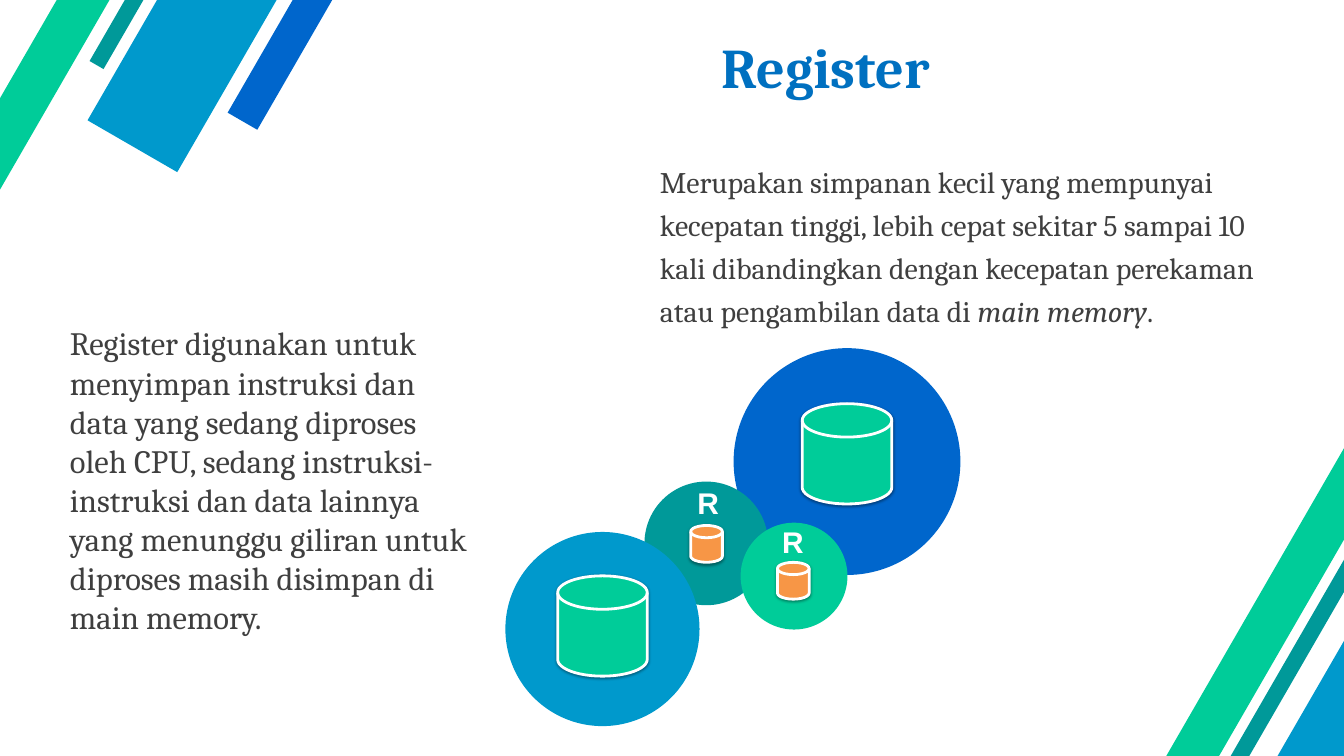
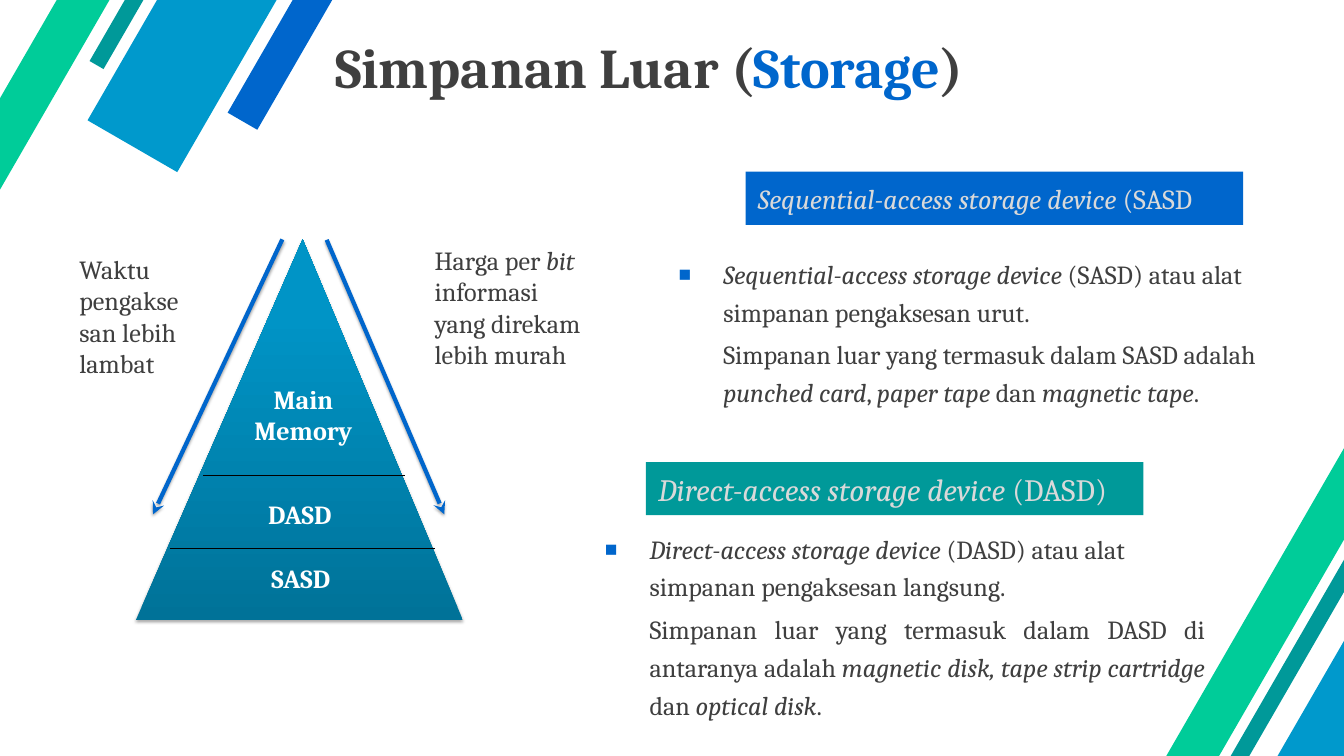
from copy import deepcopy
from lxml.etree import SubElement
from pptx import Presentation
from pptx.dml.color import RGBColor
from pptx.enum.shapes import MSO_CONNECTOR, MSO_SHAPE
from pptx.enum.text import MSO_ANCHOR, PP_ALIGN
from pptx.oxml.ns import qn
from pptx.util import Pt

BLUE = RGBColor(0x00, 0x66, 0xCC)
SKY = RGBColor(0x00, 0x99, 0xCC)
TEAL = RGBColor(0x00, 0x99, 0x99)
GREEN = RGBColor(0x00, 0xCC, 0x99)
TITLE = RGBColor(0x00, 0x70, 0xC0)
ORANGE = RGBColor(0xF7, 0x96, 0x46)
DARK = RGBColor(0x3F, 0x3F, 0x3F)
PALE = RGBColor(0xD9, 0xD9, 0xD9)
WHITE = RGBColor(0xFF, 0xFF, 0xFF)
BLACK = RGBColor(0x00, 0x00, 0x00)
SHADES = [(0, RGBColor(0x00, 0x72, 0x98)), (0.8, RGBColor(0x00, 0x94, 0xC6)),
          (1, RGBColor(0x00, 0x95, 0xC7))]
TOP = (346, 32, 1077, 78)
WIDE = (13, 6.5)
SLIM = (7.2, 3.6)


def form(slide, kind, box, color):
    shape = slide.shapes.add_shape(kind, *map(Pt, box))
    shape.shadow.inherit = False
    shape.fill.solid()
    shape.fill.fore_color.rgb = color
    shape.line.fill.background()
    return shape


def text(slide, box, size, color, paras, inset=SLIM, bold=False, align=None,
         anchor=MSO_ANCHOR.TOP, space=None, fill=None, font="Cambria"):
    shape = slide.shapes.add_textbox(*map(Pt, box))
    if fill is not None:
        shape.fill.solid()
        shape.fill.fore_color.rgb = fill
    frame = shape.text_frame
    frame.word_wrap = True
    frame.vertical_anchor = anchor
    frame.margin_left = frame.margin_right = Pt(inset[0])
    frame.margin_top = frame.margin_bottom = Pt(inset[1])
    for row, words in enumerate(paras):
        para = frame.add_paragraph() if row else frame.paragraphs[0]
        para.alignment = align
        para.line_spacing = space
        if row:
            para.space_before = Pt(size * 0.2)
        for turn, part in enumerate(words.split("*")):
            if part:
                run = para.add_run()
                run.text = part
                run.font.name = font
                run.font.size = Pt(size)
                run.font.bold = bold
                run.font.italic = turn % 2 == 1
                run.font.color.rgb = color
    return frame


deck = Presentation()
deck.slide_width, deck.slide_height = Pt(1440), Pt(810)
blank = deck.slide_layouts[6]
for holder in list(blank.placeholders):
    holder.element.getparent().remove(holder.element)
first = deck.slides.add_slide(blank)
second = deck.slides.add_slide(blank)
shady = []

bands = []
for left, top, width, height, color in [
    (-102.2, -515.5, 1448, 36.7, BLUE),
    (-219.6, -525, 1446, 111, SKY),
    (-258.5, -566, 1448, 17.3, TEAL),
    (-419.8, -394, 1444.3, 49, GREEN),
    (985, 278, 1446, 111, SKY),
    (928.8, 239.8, 1448, 17.3, TEAL),
    (771, 412.6, 1444.3, 49, GREEN),
]:
    band = form(first, MSO_SHAPE.RECTANGLE, (left, top, width, height), color)
    band.rotation = 300
    bands.append(band)
for band in bands:
    blank.shapes.element.append(band.element)

text(first, TOP, 60, TITLE, ["Register"], WIDE, True, PP_ALIGN.CENTER, MSO_ANCHOR.MIDDLE)
text(first, (694, 161, 669, 158), 32, DARK,
     ["Merupakan simpanan kecil yang mempunyai kecepatan tinggi, lebih cepat sekitar "
      "5 sampai 10 kali dibandingkan dengan kecepatan perekaman atau pengambilan data "
      "di *main memory*."], WIDE, space=1.2)
text(first, (62, 340, 465, 353.5), 34.9, DARK,
     ["Register digunakan untuk menyimpan instruksi dan data yang sedang diproses oleh "
      "CPU, sedang instruksi-instruksi dan data lainnya yang menunggu giliran untuk "
      "diproses masih disimpan di main memory."], WIDE)

for left, top, size, color in [
    (786, 373, 243, BLUE),
    (690.5, 516, 132.5, TEAL),
    (541.5, 570, 208, SKY),
    (793.5, 560, 114.5, GREEN),
]:
    form(first, MSO_SHAPE.OVAL, (left, top, size, size), color)

for left, top, width, height, color in [
    (740, 563, 34, 39.5, ORANGE),
    (833, 602.5, 34, 39.5, ORANGE),
    (859.5, 432.5, 96, 107.5, GREEN),
    (597.5, 617, 96, 107.5, GREEN),
]:
    disk = form(first, MSO_SHAPE.FLOWCHART_MAGNETIC_DISK, (left, top, width, height), color)
    disk.line.color.rgb = WHITE
    disk.line.width = Pt(3)
    shady.append((disk, 38, 1.6))

for left, top in [(740, 516), (831, 557)]:
    frame = text(first, (left, top, 36, 46), 32, WHITE, ["R"], bold=True, font="Arial")
    frame.word_wrap = False

title = text(second, TOP, 60, DARK, ["Simpanan Luar (*Storage*)"], WIDE, True,
             anchor=MSO_ANCHOR.MIDDLE)
accent = title.paragraphs[0].runs[1].font
accent.italic = False
accent.color.rgb = BLUE

for left, top, size, fill, words in [
    (799, 184, 29.6, BLUE, "*Sequential-access storage device* (SASD"),
    (692, 495, 33.3, TEAL, "*Direct-access storage device *(DASD)"),
]:
    text(second, (left, top, 533, 57), size, PALE, [words], WIDE,
         anchor=MSO_ANCHOR.MIDDLE, fill=fill)

for left, top, align, paras in [
    (714, 263.5, None,
     ["*Sequential-access storage device* (SASD) atau alat simpanan pengaksesan urut.",
      "Simpanan luar yang termasuk dalam SASD adalah *punched card*, *paper tape *dan "
      "*magnetic tape*."]),
    (635, 558, PP_ALIGN.JUSTIFY,
     ["*Direct-access storage device *(DASD) atau alat simpanan pengaksesan langsung.",
      "Simpanan luar yang termasuk dalam DASD di antaranya adalah "
      "*magnetic disk, tape strip cartridge *dan* optical disk*."]),
]:
    frame = text(second, (left, top, 669, 158), 28, DARK, paras, WIDE, space=1.2)
    head, body = frame.paragraphs
    body.alignment = align
    for para, indent in [(head, -48), (body, 0)]:
        props = para._p.get_or_add_pPr()
        props.set("marL", str(Pt(48)))
        props.set("indent", str(Pt(indent)))
    props = head._p.get_or_add_pPr()
    tint = SubElement(props, qn("a:buClr"))
    SubElement(tint, qn("a:srgbClr"), val=str(BLUE))
    SubElement(props, qn("a:buSzPct"), val="80000")
    SubElement(props, qn("a:buFont"), typeface="Arial")
    SubElement(props, qn("a:buChar"), char="■")

for box, words in [
    ((458.5, 258, 173, 193), "Harga per *bit *informasi yang direkam lebih murah"),
    ((78, 268, 122.5, 185), "Waktu pengaksesan lebih lambat"),
]:
    text(second, box, 28, DARK, [words], fill=WHITE)

cone = form(second, MSO_SHAPE.ISOSCELES_TRIANGLE, (145.5, 256.5, 350.5, 408), SKY)
cone.adjustments[0] = 0.51
cone.fill.gradient()
cone.fill.gradient_angle = 90
stops = cone.element.spPr.find(".//" + qn("a:gsLst"))
stops.append(deepcopy(stops[-1]))
for stop, (place, color) in zip(cone.fill.gradient_stops, SHADES):
    stop.position = place
    stop.color.rgb = color
shady.append((cone, 35, 1.8))

for ends, color, width in [
    ((350, 257, 476, 551), BLUE, 4.5),
    ((302.5, 256.5, 164, 551), BLUE, 4.5),
    ((218, 509, 433.5, 509), BLACK, 0.75),
    ((182, 587.5, 466.5, 587.5), BLACK, 0.75),
]:
    line = second.shapes.add_connector(MSO_CONNECTOR.STRAIGHT, *map(Pt, ends))
    line.line.color.rgb = color
    line.line.width = Pt(width)
    SubElement(line.element.spPr, qn("a:effectLst"))
    if color == BLUE:
        SubElement(line.line._get_or_add_ln(), qn("a:tailEnd"), type="stealth")
        shady.append((line, 35, 1.8))

for box, words in [
    ((253.5, 599, 137.5, 52), "SASD"),
    ((263, 530.5, 116.5, 47), "DASD"),
    ((257, 407, 136, 81), "Main Memory"),
]:
    text(second, box, 28, WHITE, [words], bold=True, align=PP_ALIGN.CENTER)

for shape, alpha, gap in shady:
    effect = shape.element.spPr.find(qn("a:effectLst"))
    shadow = SubElement(effect, qn("a:outerShdw"), blurRad=str(Pt(3.1)), dist=str(Pt(gap)),
                        dir="5400000", rotWithShape="0")
    tint = SubElement(shadow, qn("a:srgbClr"), val=str(BLACK))
    SubElement(tint, qn("a:alpha"), val=str(alpha * 1000))

deck.save("out.pptx")
